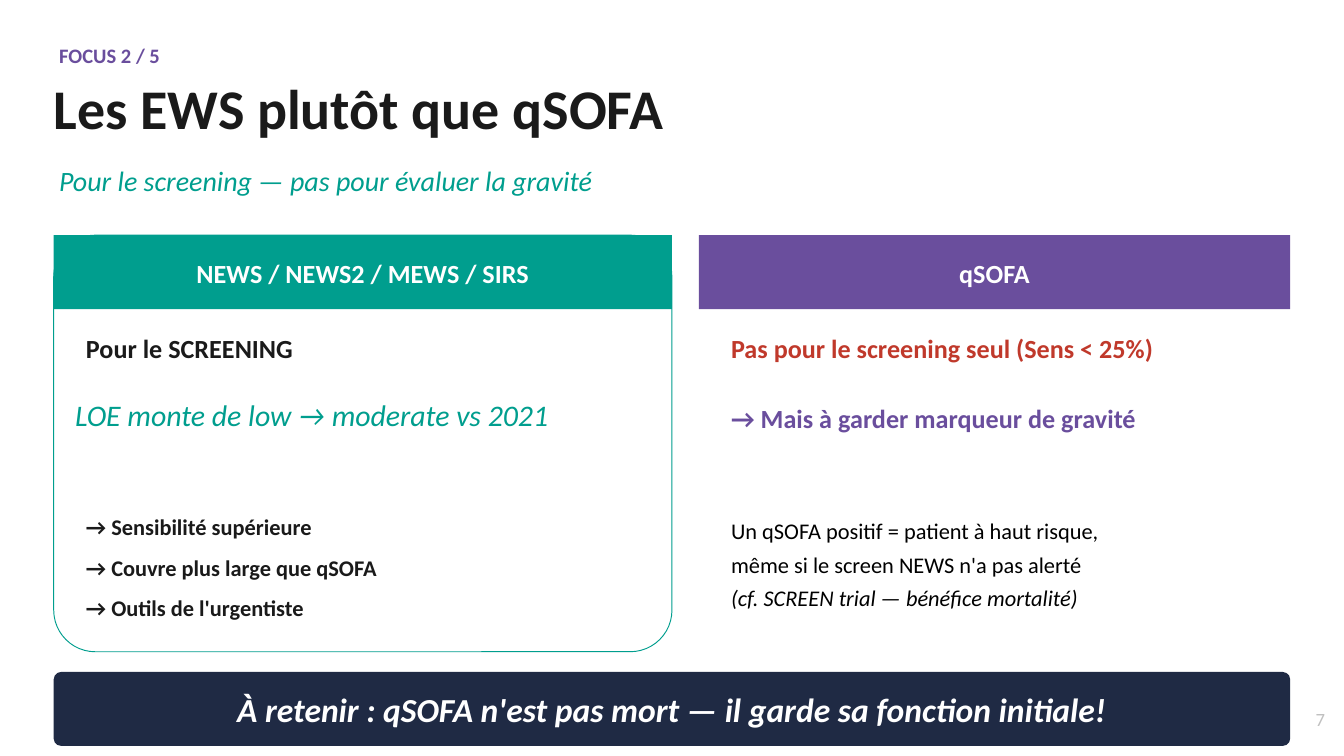
from collections import namedtuple

from pptx import Presentation
from pptx.dml.color import RGBColor
from pptx.enum.shapes import MSO_SHAPE
from pptx.enum.text import MSO_ANCHOR, MSO_AUTO_SIZE, PP_ALIGN
from pptx.util import Inches, Pt

# The slide is a grid of 100 columns by 56.25 rows, each cell 0.1 inch
CELL = Inches(0.1)
COLUMNS, ROWS = 100, 56.25
FONT = "Calibri"
COLORS = {
    "white": "FFFFFF", "ink": "1A1A1A", "black": "000000", "teal": "009E8E",
    "purple": "6A4E9D", "red": "C0392B", "navy": "1F2A44", "grey": "C0C0C0",
}
Box = namedtuple("Box", "left top width height")


def color(name):
    return RGBColor.from_string(COLORS[name])


def to_lengths(box):
    return [round(value * CELL) for value in box]


def add_text(slide, box, text, size, color_name, bold=False, italic=False,
             align=PP_ALIGN.LEFT, anchor=MSO_ANCHOR.TOP, inset=True, wrap=True):
    shape = slide.shapes.add_textbox(*to_lengths(box))
    frame = shape.text_frame
    frame.text = text
    frame.word_wrap = wrap
    frame.auto_size = MSO_AUTO_SIZE.SHAPE_TO_FIT_TEXT
    frame.vertical_anchor = anchor
    frame.margin_left = frame.margin_right = Inches(0.04 if inset else 0)
    frame.margin_top = frame.margin_bottom = Inches(0.02 if inset else 0)
    paragraph = frame.paragraphs[0]
    paragraph.alignment = align
    font = paragraph.runs[0].font
    font.name, font.size = FONT, Pt(size)
    font.bold, font.italic = bold, italic
    font.color.rgb = color(color_name)


def add_panel(slide, box, fill, line=None, rounded=False):
    kind = MSO_SHAPE.ROUNDED_RECTANGLE if rounded else MSO_SHAPE.RECTANGLE
    shape = slide.shapes.add_shape(kind, *to_lengths(box))
    shape.shadow.inherit = False
    if rounded:
        shape.adjustments[0] = 0.1
    shape.fill.solid()
    shape.fill.fore_color.rgb = color(fill)
    if line:
        shape.line.color.rgb = color(line)
        shape.line.width = Pt(0.5)
    else:
        shape.line.fill.background()


def add_heading(slide, box):
    left, top, width, _ = box
    add_text(slide, Box(left, top, 30, 2.3), "FOCUS 2 / 5", 11, "purple", bold=True)
    add_text(slide, Box(left, top + 2.5, 45.8, 5), "Les EWS plutôt que qSOFA",
             30, "ink", bold=True, inset=False, wrap=False)
    add_text(slide, Box(left, top + 9, width, 2.9),
             "Pour le screening — pas pour évaluer la gravité", 15, "teal", italic=True)


def add_column_header(slide, box, title, fill):
    add_panel(slide, Box(box.left, box.top, box.width, 5.5), fill)
    add_text(slide, Box(box.left, box.top + 1.4, box.width, 2.8), title, 14, "white",
             bold=True, align=PP_ALIGN.CENTER, anchor=MSO_ANCHOR.MIDDLE)


def add_lines(slide, box, pitch, lines):
    """Stack 12-point lines at an equal pitch; each is (text, color, bold, italic)."""
    for index, (text, color_name, bold, italic) in enumerate(lines):
        line_box = box._replace(top=box.top + index * pitch)
        add_text(slide, line_box, text, 12, color_name, bold, italic)


def add_ews_column(slide, box):
    left, top = box.left + 2, box.top
    add_panel(slide, box, "white", line="teal", rounded=True)
    add_column_header(slide, box, "NEWS / NEWS2 / MEWS / SIRS", "teal")
    add_text(slide, Box(left, top + 7, 43, 2.8), "Pour le SCREENING", 14, "ink", bold=True)
    add_text(slide, Box(left - 0.8, top + 11.8, 43, 3.1),
             "LOE monte de low → moderate vs 2021", 16, "teal", italic=True)
    add_lines(slide, Box(left, top + 20.5, 43, 2.4), 3, [
        ("→ Sensibilité supérieure", "ink", True, False),
        ("→ Couvre plus large que qSOFA", "ink", True, False),
        ("→ Outils de l'urgentiste", "ink", True, False),
    ])


def add_qsofa_column(slide, box):
    left, top = box.left + 2, box.top
    add_column_header(slide, box, "qSOFA", "purple")
    add_text(slide, Box(left, top + 7, 40, 2.8),
             "Pas pour le screening seul (Sens < 25%)", 14, "red", bold=True)
    add_text(slide, Box(left, top + 12.2, 40, 2.8),
             "→ Mais à garder marqueur de gravité", 14, "purple", bold=True)
    add_lines(slide, Box(left, top + 20.8, 40, 2.4), 2.5, [
        ("Un qSOFA positif = patient à haut risque,", "black", False, False),
        ("même si le screen NEWS n'a pas alerté", "black", False, False),
        ("(cf. SCREEN trial — bénéfice mortalité)", "black", False, True),
    ])


def add_takeaway(slide, box):
    add_panel(slide, box, "navy", rounded=True)
    add_text(slide, Box(box.left + 1, box.top + 1, box.width - 2, 3.5),
             "À retenir : qSOFA n'est pas mort — il garde sa fonction initiale!",
             18, "white", bold=True, italic=True,
             align=PP_ALIGN.CENTER, anchor=MSO_ANCHOR.MIDDLE)


def main():
    presentation = Presentation()
    presentation.slide_width = round(COLUMNS * CELL)
    presentation.slide_height = round(ROWS * CELL)
    slide = presentation.slides.add_slide(presentation.slide_layouts[6])
    slide.background.fill.solid()
    slide.background.fill.fore_color.rgb = color("white")

    add_heading(slide, Box(4, 3, 90, 12))
    add_ews_column(slide, Box(4, 17.5, 46, 31))
    add_qsofa_column(slide, Box(52, 17.5, 44, 31))
    add_takeaway(slide, Box(4, 50, 92, 5.5))
    # Page number
    add_text(slide, Box(96, 52.5, 3, 2.1), "7", 10, "grey", align=PP_ALIGN.RIGHT)

    presentation.save("out.pptx")


if __name__ == "__main__":
    main()
